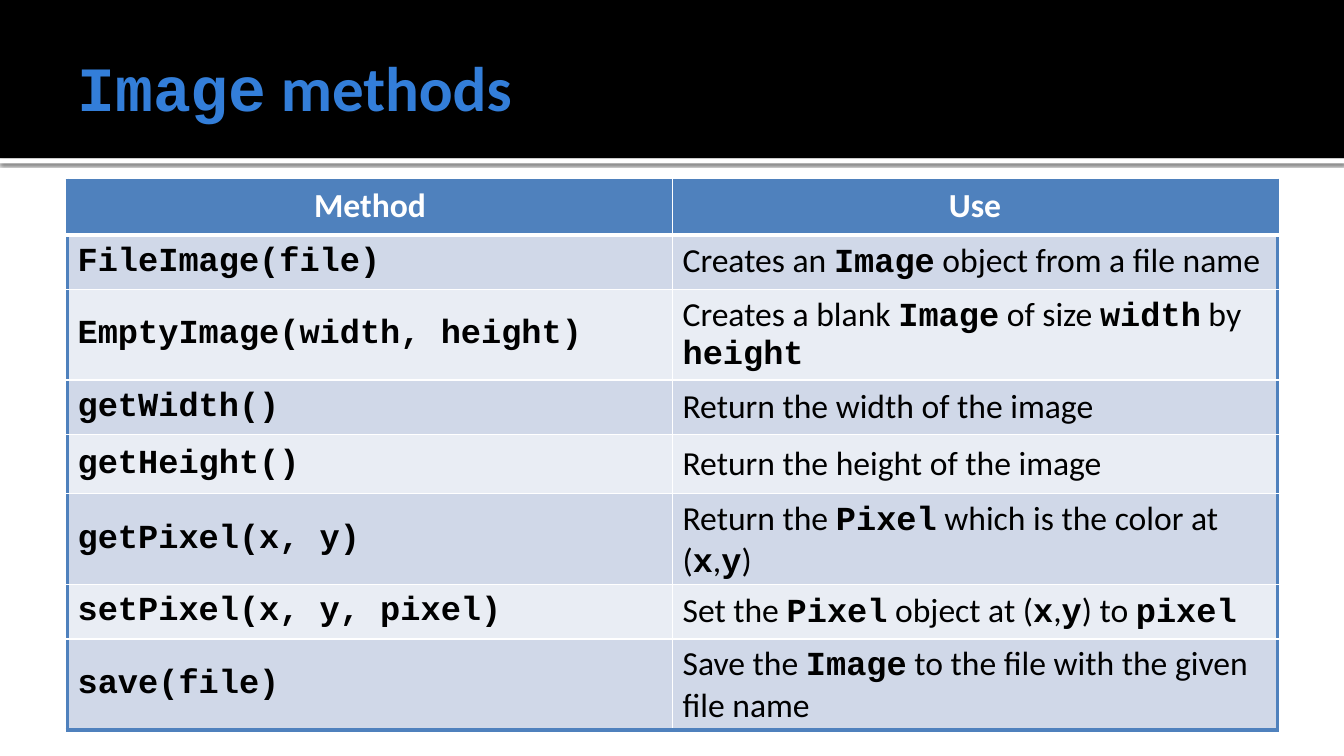
from dataclasses import dataclass

import pptx
import pptx.dml.color
import pptx.enum.shapes
import pptx.enum.text
import pptx.oxml
import pptx.oxml.ns
import pptx.util
from pptx.dml.color import RGBColor
from pptx.util import Inches

BLACK = RGBColor(0x00, 0x00, 0x00)
WHITE = RGBColor(0xFF, 0xFF, 0xFF)
TITLE_BLUE = RGBColor(0x33, 0x7E, 0xD9)
TABLE_BLUE = RGBColor(0x4F, 0x81, 0xBD)
DARK_BAND = RGBColor(0xD0, 0xD8, 0xE8)
LIGHT_BAND = RGBColor(0xE9, 0xED, 0xF4)

BODY_FONT = "Calibri"
CODE_FONT = "Courier New"
SLIDE_WIDTH = Inches(13.33)
HEADER_HEIGHT = Inches(1.57)


@dataclass
class Row:
    method: str
    use: str
    height: float = 0.54


# Text between backticks is set as code.
ROWS = [
    Row("Method", "Use"),
    Row("`FileImage(file)`", "Creates an `Image` object from a file name"),
    Row("`EmptyImage(width, height)`",
        "Creates a blank `Image` of size `width` by `height`", 0.75),
    Row("`getWidth()`", "Return the width of the image"),
    Row("`getHeight()`", "Return the height of the image", 0.59),
    Row("`getPixel(x, y)`", "Return the `Pixel` which is the color at (`x`,`y`)"),
    Row("`setPixel(x, y, pixel)`", "Set the `Pixel` object at (`x`,`y`) to `pixel`"),
    Row("`save(file)`", "Save the `Image` to the file with the given file name"),
]


def write_text(p, text: str, size: float, color: RGBColor, bold: bool = False) -> None:
    """Fill a paragraph, setting backticked parts in the bold code font."""
    p.font.size = pptx.util.Pt(size)
    p.font.color.rgb = color
    for i, part in enumerate(text.split("`")):
        if part:
            is_code = i % 2 == 1
            r = p.add_run()
            r.text = part
            r.font.name = CODE_FONT if is_code else BODY_FONT
            r.font.bold = bold or is_code


def add_bar(slide, top: int, height: int, color: RGBColor):
    sp = slide.shapes.add_shape(
        pptx.enum.shapes.MSO_SHAPE.RECTANGLE, 0, top, SLIDE_WIDTH, height)
    sp.shadow.inherit = False
    sp.fill.solid()
    sp.fill.fore_color.rgb = color
    sp.line.fill.background()
    return sp


def add_drop_shadow(sp) -> None:
    effects = sp._element.spPr.find(pptx.oxml.ns.qn("a:effectLst"))
    effects.append(pptx.oxml.parse_xml(
        f'<a:outerShdw {pptx.oxml.ns.nsdecls("a")} blurRad="{pptx.util.Pt(2.5)}" '
        f'dist="{pptx.util.Pt(0.8)}" dir="5400000" algn="tl" rotWithShape="0">'
        f'<a:srgbClr val="{BLACK}"><a:alpha val="60000"/></a:srgbClr></a:outerShdw>'))


def add_title(slide) -> None:
    sp = slide.shapes.add_textbox(Inches(0.67), Inches(0.17), Inches(12), Inches(1.37))
    tf = sp.text_frame
    tf.word_wrap = True
    tf.vertical_anchor = pptx.enum.text.MSO_ANCHOR.MIDDLE
    tf.margin_right = Inches(0.05)
    write_text(tf.paragraphs[0], "`Image` methods", 45, TITLE_BLUE, bold=True)


def set_border(cell, side: str, color: RGBColor, width: float) -> None:
    """Add one border; call before the cell is filled, in the order L, R, T, B."""
    cell._tc.get_or_add_tcPr().append(pptx.oxml.parse_xml(
        f'<a:ln{side} {pptx.oxml.ns.nsdecls("a")} w="{pptx.util.Pt(width)}">'
        f'<a:solidFill><a:srgbClr val="{color}"/></a:solidFill></a:ln{side}>'))


def format_cell(cell, text: str, row: int, col: int) -> None:
    is_header, is_last = row == 0, row == len(ROWS) - 1
    outer, inner = (TABLE_BLUE, 3), (WHITE, 1)
    header_rule = (WHITE, 3)
    set_border(cell, "L", *(outer if col == 0 else inner))
    set_border(cell, "R", *(outer if col == 1 else inner))
    set_border(cell, "T", *(outer if is_header else header_rule if row == 1 else inner))
    set_border(cell, "B", *(header_rule if is_header else outer if is_last else inner))

    p = cell.text_frame.paragraphs[0]
    cell.fill.solid()
    if is_header:
        cell.fill.fore_color.rgb = TABLE_BLUE
        p.alignment = pptx.enum.text.PP_ALIGN.CENTER
    else:
        cell.fill.fore_color.rgb = DARK_BAND if row % 2 else LIGHT_BAND
        cell.vertical_anchor = pptx.enum.text.MSO_ANCHOR.MIDDLE
    write_text(p, text, 24, WHITE if is_header else BLACK, bold=is_header)


def add_methods_table(slide) -> None:
    height = Inches(5.46)
    frame = slide.shapes.add_table(
        len(ROWS), 2, Inches(0.67), Inches(1.79), Inches(12), height)
    table = frame.table
    table.first_row = table.horz_banding = False
    for i, row in enumerate(ROWS):
        table.rows[i].height = Inches(row.height)
        for j, text in enumerate((row.method, row.use)):
            format_cell(table.cell(i, j), text, i, j)
    frame.height = height


def main() -> None:
    prs = pptx.Presentation()
    prs.slide_width = SLIDE_WIDTH
    prs.slide_height = Inches(7.5)
    slide = prs.slides.add_slide(prs.slide_layouts[6])
    add_drop_shadow(add_bar(slide, HEADER_HEIGHT, Inches(0.05), WHITE))
    add_bar(slide, 0, HEADER_HEIGHT, BLACK)
    add_title(slide)
    add_methods_table(slide)
    prs.save("out.pptx")


if __name__ == "__main__":
    main()
